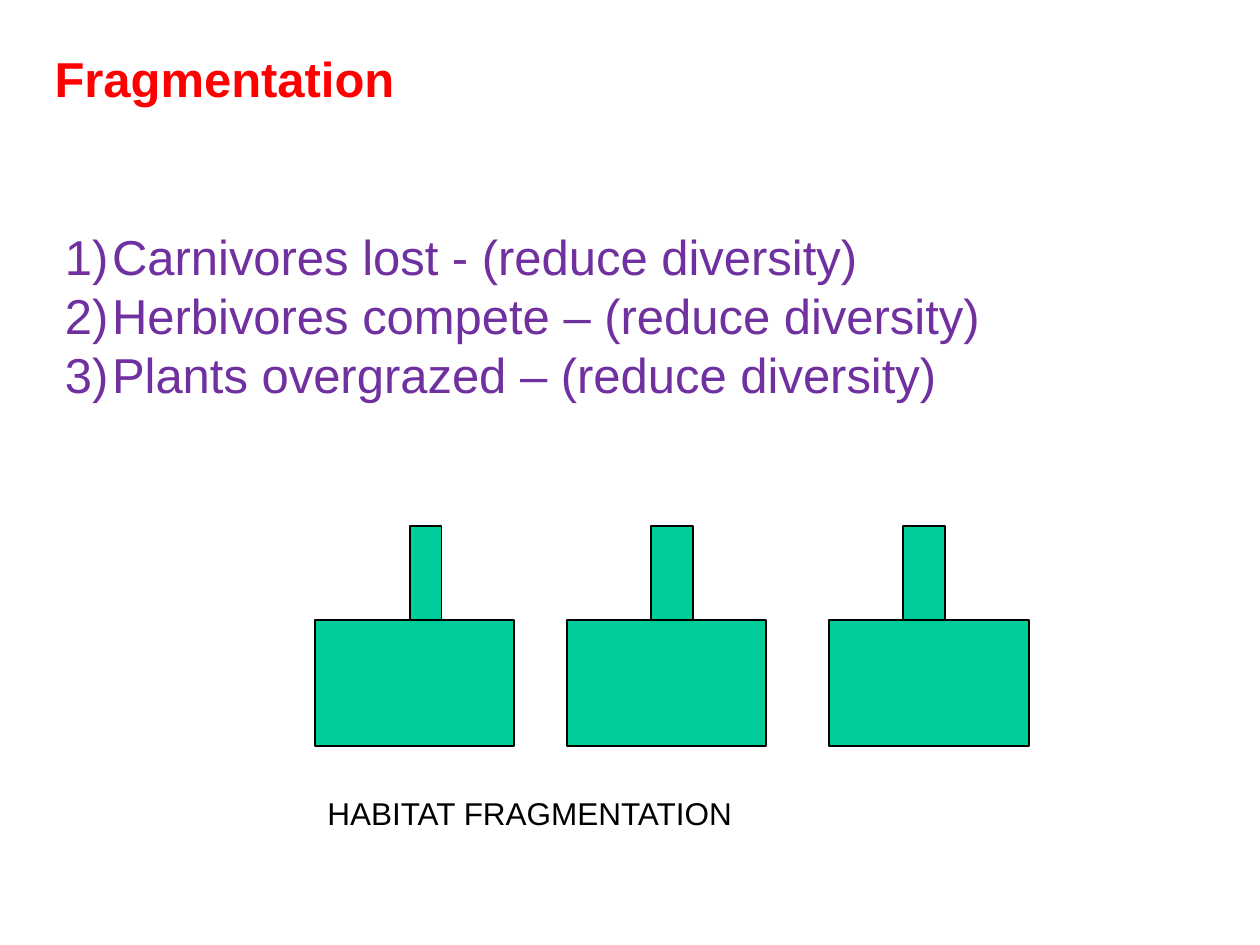
from lxml import etree
from pptx import Presentation
from pptx import util as u
from pptx.dml.color import RGBColor
from pptx.enum import shapes, text
from pptx.oxml import ns

COLOURS = {"title": "FF0000", "effects": "7030A0", "caption": "000000",
           "habitat": "00CC99", "outline": "000000"}

deck = Presentation()
deck.slide_width, deck.slide_height = u.Cm(25.4), u.Cm(19.05)
page = deck.slides.add_slide(deck.slide_layouts[6])


def add_block(left, top, width, height):
    block = page.shapes.add_shape(shapes.MSO_SHAPE.RECTANGLE, u.Cm(left), u.Cm(top),
                                  u.Cm(width), u.Cm(height))
    block.shadow.inherit = False
    block.fill.solid()
    block.fill.fore_color.rgb = RGBColor.from_string(COLOURS["habitat"])
    block.line.color.rgb = RGBColor.from_string(COLOURS["outline"])
    block.line.width = u.Pt(1)


def add_text(left, top, width, height, lines, size, colour, bold=False, numbered=False):
    box = page.shapes.add_textbox(u.Cm(left), u.Cm(top), u.Cm(width), u.Cm(height))
    frame = box.text_frame
    frame.word_wrap = True
    frame.auto_size = text.MSO_AUTO_SIZE.SHAPE_TO_FIT_TEXT
    frame.text = "\n".join(lines)
    for para in frame.paragraphs:
        if numbered:
            properties = para._p.get_or_add_pPr()
            properties.set("marL", str(u.Cm(0.95)))
            properties.set("indent", str(-u.Cm(0.95)))
            etree.SubElement(properties, ns.qn("a:buFont"), typeface="+mj-lt")
            etree.SubElement(properties, ns.qn("a:buAutoNum"), type="arabicParenR")
        para.font.name = "Arial"
        para.font.size = u.Pt(size)
        para.font.bold = bold
        para.font.color.rgb = RGBColor.from_string(COLOURS[colour])


habitat_top, corridor_height = 12.5, 1.9
for habitat_left, corridor_left, corridor_width in [
        (6.35, 8.26, 0.64), (11.43, 13.12, 0.85), (16.72, 18.2, 0.85)]:
    add_block(habitat_left, habitat_top, 4.02, 2.54)
    add_block(corridor_left, habitat_top - corridor_height, corridor_width, corridor_height)

add_text(6.35, 15.88, 15.24, 1.45, ["HABITAT FRAGMENTATION"], 18, "caption")
add_text(0.85, 0.85, 16.51, 1.45, ["Fragmentation"], 28, "title", bold=True)
add_text(1.06, 4.45, 22.65, 3.84, [
    "Carnivores lost - (reduce diversity)",
    "Herbivores compete – (reduce diversity)",
    "Plants overgrazed – (reduce diversity)",
], 28, "effects", numbered=True)

deck.save("out.pptx")
